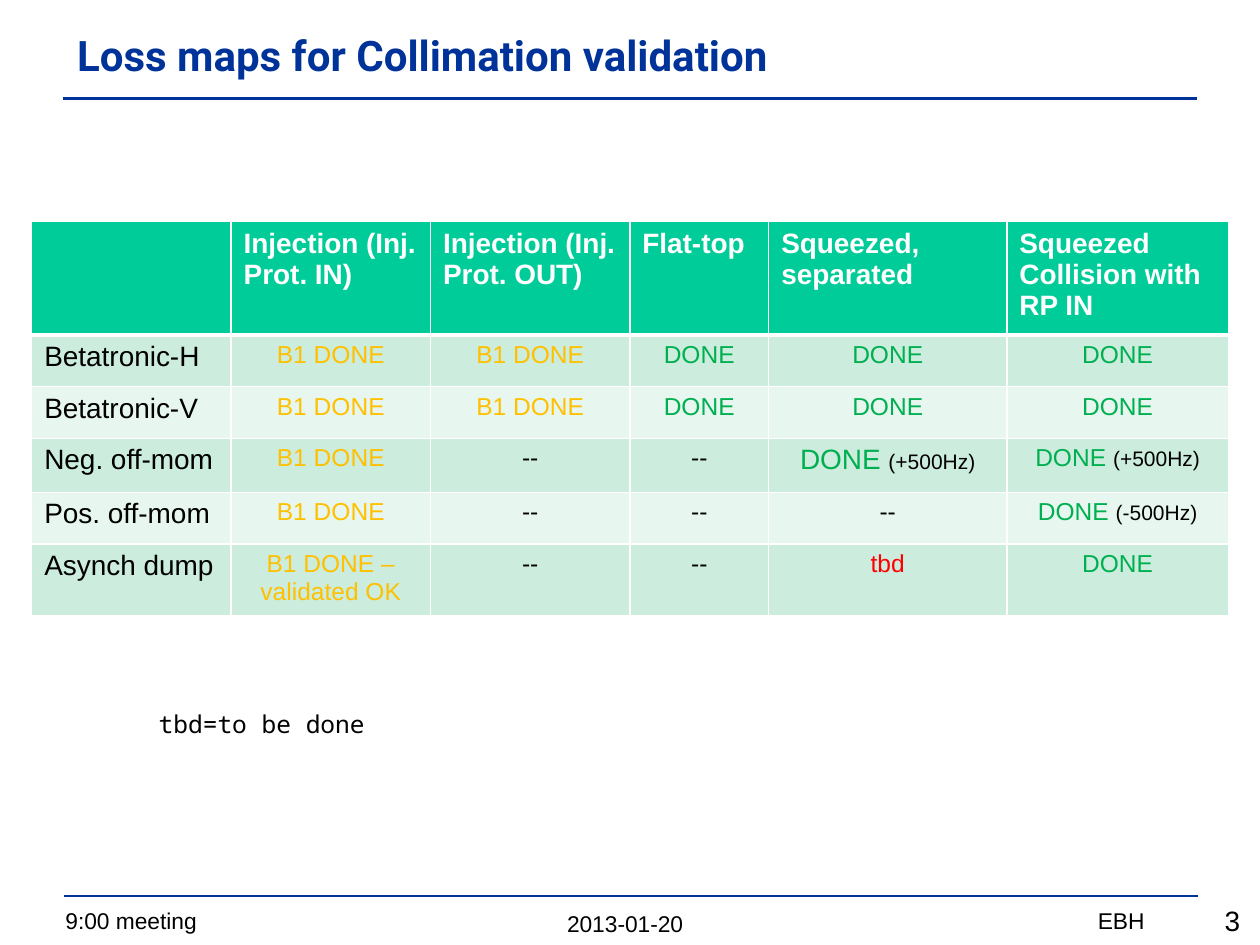
from pptx import Presentation
from pptx.dml.color import RGBColor
from pptx.enum import shapes, text
from pptx.oxml import parse_xml
from pptx.oxml.ns import nsdecls
from pptx.util import Cm, Pt

NAVY = RGBColor(0x00, 0x33, 0x99)
BLACK = RGBColor(0x00, 0x00, 0x00)
WHITE = RGBColor(0xFF, 0xFF, 0xFF)
AMBER = RGBColor(0xFF, 0xC0, 0x00)
GREEN = RGBColor(0x00, 0xB0, 0x50)
RED = RGBColor(0xFF, 0x00, 0x00)
HEAD = RGBColor(0x00, 0xCC, 0x99)
BANDS = [RGBColor(0xCC, 0xEC, 0xDE), RGBColor(0xE7, 0xF6, 0xEF)]
LEFT, MID, RIGHT = text.PP_ALIGN.LEFT, text.PP_ALIGN.CENTER, text.PP_ALIGN.RIGHT

# Content: a cell is a list of runs (wording, colour, size)
TITLE = "Loss maps for Collimation validation"
HEADS = ["", "Injection (Inj. Prot. IN)", "Injection (Inj. Prot. OUT)",
         "Flat-top", "Squeezed, separated", "Squeezed Collision with RP IN"]
B1 = [("B1 DONE", AMBER, 14)]
VALID = [("B1 DONE – validated OK", AMBER, 14)]
DONE = [("DONE", GREEN, 14)]
NONE = [("--", BLACK, 14)]
TBD = [("tbd", RED, 14)]


def shift(note, size=14):
    return [("DONE ", GREEN, size), (note, BLACK, 12)]


ROWS = [
    ("Betatronic-H", B1, B1, DONE, DONE, DONE),
    ("Betatronic-V", B1, B1, DONE, DONE, DONE),
    ("Neg. off-mom", B1, NONE, NONE, shift("(+500Hz)", 16), shift("(+500Hz)")),
    ("Pos. off-mom", B1, NONE, NONE, NONE, shift("(-500Hz)")),
    ("Asynch dump", VALID, NONE, NONE, TBD, DONE),
]
WIDTHS = [4.02, 4.02, 4.02, 2.8, 4.8, 4.47]
HEIGHTS = [2.26, 1.04, 1.04, 1.09, 1.04, 1.42]

# Text boxes: wording, left, top, width, height, align, font, size
NOTES = [
    ("2013-01-20", 6.15, 18.21, 12.9, 0.81, MID, "Arial", 13),
    ("9:00 meeting", 1.07, 18.16, 9.4, 0.81, LEFT, "Arial", 13),
    ("EBH", 15.9, 18.16, 7.42, 0.81, RIGHT, "Arial", 13),
    ("3", 22.33, 18.08, 2.92, 0.94, RIGHT, "Arial", 16),
    ("tbd=to be done", 2.95, 14.17, 12.4, 1.02, LEFT, "Noto Sans Mono", 14),
]
# Rules: left, top
RULES = [(1.27, 1.98), (1.3, 18.06)]
RULE_W = 22.86


def style(run, color, size, name="Arial", bold=False):
    font = run.font
    font.name, font.size, font.bold = name, Pt(size), bold
    font.color.rgb = color


def fill(cell, color, runs, align, bold=False):
    cell.fill.solid()
    cell.fill.fore_color.rgb = color
    para = cell.text_frame.paragraphs[0]
    para.alignment = align
    for words, tint, size in runs:
        run = para.add_run()
        run.text = words
        style(run, tint, size, bold=bold)


def border(cell, top, base):
    props = cell._tc.get_or_add_tcPr()
    sides = [("lnL", 1), ("lnR", 1), ("lnT", top), ("lnB", base)]
    for i, (side, width) in enumerate(sides):
        props.insert(i, parse_xml(
            f'<a:{side} {nsdecls("a")} w="{Pt(width)}"><a:solidFill>'
            f'<a:srgbClr val="{WHITE}"/></a:solidFill></a:{side}>'))


deck = Presentation()
deck.slide_width, deck.slide_height = Cm(25.4), Cm(19.05)
slide = deck.slides.add_slide(deck.slide_layouts[5])

# Title
title = slide.shapes.title
title.left, title.top, title.width, title.height = map(Cm, (1.3, 0.23, 22.83, 1.73))
frame = title.text_frame
frame.text = TITLE
frame.vertical_anchor = text.MSO_ANCHOR.MIDDLE
frame.paragraphs[0].alignment = LEFT
style(frame.paragraphs[0].runs[0], NAVY, 24, "Roboto", True)

# Rules under the title and over the footer
for x, y in RULES:
    rule = slide.shapes.add_connector(
        shapes.MSO_CONNECTOR.STRAIGHT, Cm(x), Cm(y), Cm(x + RULE_W), Cm(y))
    rule.line.color.rgb = NAVY
    rule.line.width = Pt(1.5)
    rule._element.spPr.append(parse_xml(f'<a:effectLst {nsdecls("a")}/>'))

# Footer and key
for words, x, y, w, h, align, name, size in NOTES:
    frame = slide.shapes.add_textbox(Cm(x), Cm(y), Cm(w), Cm(h)).text_frame
    frame.word_wrap = True
    frame.text = words
    frame.paragraphs[0].alignment = align
    style(frame.paragraphs[0].runs[0], BLACK, size, name)

# Status table
table = slide.shapes.add_table(
    len(HEIGHTS), len(WIDTHS), Cm(0.64), Cm(4.47),
    Cm(sum(WIDTHS)), Cm(sum(HEIGHTS))).table
for col, width in zip(table.columns, WIDTHS):
    col.width = Cm(width)
for row, height in zip(table.rows, HEIGHTS):
    row.height = Cm(height)

for c, words in enumerate(HEADS):
    cell = table.cell(0, c)
    fill(cell, HEAD, [(words, WHITE, 16)] if words else [], LEFT, True)
    border(cell, 1, 3)

for r, (label, *states) in enumerate(ROWS, 1):
    for c, runs in enumerate([[(label, BLACK, 16)], *states]):
        cell = table.cell(r, c)
        fill(cell, BANDS[(r - 1) % 2], runs, MID if c else LEFT)
        border(cell, 3 if r == 1 else 1, 1)

deck.save("out.pptx")
